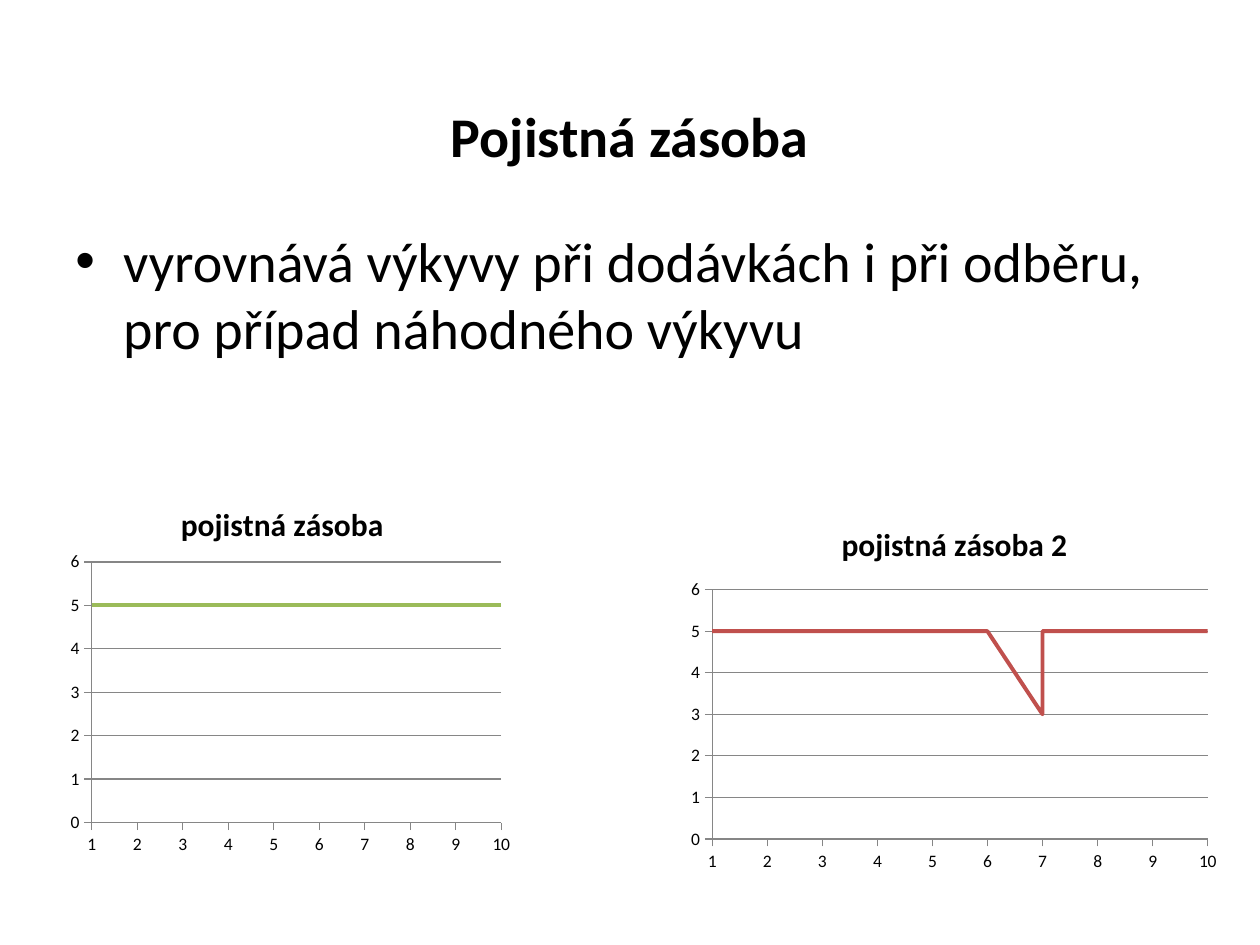
from dataclasses import dataclass

from lxml import etree
from pptx import Presentation
from pptx.chart.data import XyChartData
from pptx.dml.color import RGBColor
from pptx.enum.chart import XL_CHART_TYPE, XL_TICK_LABEL_POSITION, XL_TICK_MARK
from pptx.enum.text import MSO_ANCHOR, PP_ALIGN
from pptx.oxml.ns import qn
from pptx.util import Inches, Pt

SCATTER_LINES = XL_CHART_TYPE.XY_SCATTER_LINES_NO_MARKERS
LABELS_NEXT_TO_AXIS = XL_TICK_LABEL_POSITION.NEXT_TO_AXIS
TICK_OUTSIDE = XL_TICK_MARK.OUTSIDE
TICK_NONE = XL_TICK_MARK.NONE
MIDDLE = MSO_ANCHOR.MIDDLE
TOP = MSO_ANCHOR.TOP
CENTER = PP_ALIGN.CENTER
LEFT = PP_ALIGN.LEFT


@dataclass(frozen=True)
class Theme:
    """Colours, font and type sizes of the slide."""

    font: str = "Calibri"
    text: RGBColor = RGBColor(0x00, 0x00, 0x00)
    grid: RGBColor = RGBColor(0x86, 0x86, 0x86)
    green: RGBColor = RGBColor(0x9B, 0xBB, 0x59)
    red: RGBColor = RGBColor(0xC0, 0x50, 0x4D)
    text_size: Pt = Pt(32)
    title_spacing: Pt = Pt(58)
    chart_title_size: Pt = Pt(18)
    axis_size: Pt = Pt(10)
    grid_width: Pt = Pt(0.75)
    series_width: Pt = Pt(2.25)


THEME = Theme()


def style_font(font, size, bold=False):
    """Apply the theme font at the given size."""
    font.name = THEME.font
    font.size = size
    font.bold = bold
    font.color.rgb = THEME.text


def add_bullet(paragraph, indent):
    """Give a paragraph a round bullet with a hanging indent."""
    properties = paragraph._p.get_or_add_pPr()
    properties.set("marL", str(indent))
    properties.set("indent", str(-indent))
    etree.SubElement(properties, qn("a:buFont")).set("typeface", "Arial")
    etree.SubElement(properties, qn("a:buChar")).set("char", "•")


def add_text(slide, box, text, bold=False, align=LEFT, anchor=TOP,
             line_spacing=None, bullet_indent=None, insets=(0.1, 0.05, 0.1, 0.05)):
    """Add a wrapped text box with one formatted paragraph."""
    frame = slide.shapes.add_textbox(*map(Inches, box)).text_frame
    frame.word_wrap = True
    frame.vertical_anchor = anchor
    (frame.margin_left, frame.margin_top,
     frame.margin_right, frame.margin_bottom) = map(Inches, insets)
    paragraph = frame.paragraphs[0]
    paragraph.alignment = align
    if line_spacing is not None:
        paragraph.line_spacing = line_spacing
    if bullet_indent is not None:
        add_bullet(paragraph, Inches(bullet_indent))
    run = paragraph.add_run()
    run.text = text
    style_font(run.font, THEME.text_size, bold)


def set_plot_layout(chart, plot_box):
    """Fix the inner plot area as fractions of the chart."""
    plot_area = chart._chartSpace.chart.plotArea
    layout = plot_area.find(qn("c:layout"))
    if layout is None:
        layout = etree.Element(qn("c:layout"))
        plot_area.insert(0, layout)
    manual = etree.SubElement(layout, qn("c:manualLayout"))
    settings = [("layoutTarget", "inner"), ("xMode", "edge"), ("yMode", "edge")]
    settings += zip("xywh", map(str, plot_box))
    for name, value in settings:
        etree.SubElement(manual, qn(f"c:{name}")).set("val", value)


def style_axis(axis, minimum, maximum, gridlines):
    """Set the scale, ticks, labels and lines of an axis."""
    axis.minimum_scale = minimum
    axis.maximum_scale = maximum
    axis.major_unit = 1
    axis.major_tick_mark = TICK_OUTSIDE
    axis.minor_tick_mark = TICK_NONE
    axis.tick_label_position = LABELS_NEXT_TO_AXIS
    axis.has_major_gridlines = gridlines
    lines = [axis.format.line]
    if gridlines:
        lines.append(axis.major_gridlines.format.line)
    for line in lines:
        line.color.rgb = THEME.grid
        line.width = THEME.grid_width
    style_font(axis.tick_labels.font, THEME.axis_size)


def add_stock_chart(slide, box, plot_box, name, points, color):
    """Add a titled line chart of the stock level over time."""
    data = XyChartData()
    data_series = data.add_series(name)
    for x, y in points:
        data_series.add_data_point(x, y)
    chart = slide.shapes.add_chart(SCATTER_LINES, *map(Inches, box), data).chart
    style_font(chart.font, THEME.axis_size)
    chart.has_legend = False
    chart.has_title = True
    title_frame = chart.chart_title.text_frame
    title_frame.text = name
    style_font(title_frame.paragraphs[0].runs[0].font, THEME.chart_title_size, True)
    chart.chart_title.include_in_layout = False
    chart.plots[0].vary_by_categories = False
    series = chart.plots[0].series[0]
    series.smooth = False
    series.format.line.color.rgb = color
    series.format.line.width = THEME.series_width
    style_axis(chart.category_axis, 1, 10, False)
    style_axis(chart.value_axis, 0, 6, True)
    set_plot_layout(chart, plot_box)


def build_slide(slide):
    """Place the title, the bullet and the two charts."""
    add_text(slide, (0.5, 0.3, 9, 1.25), "Pojistná zásoba", bold=True, align=CENTER,
             anchor=MIDDLE, line_spacing=THEME.title_spacing, insets=(0, 0.03, 0, 0))
    add_text(slide, (0.5, 1.75, 9, 4.95),
             "vyrovnává výkyvy při dodávkách i při odběru, pro případ náhodného výkyvu",
             bullet_indent=0.38)
    steady = [(day, 5) for day in range(1, 13)]
    days = [1, 2, 3, 4, 4, 5, 6, 7, 7, 8, 9, 10]
    levels = [5] * 7 + [3] + [5] * 4
    add_stock_chart(slide, (0.35, 3.83, 3.78, 3), (0.1, 0.21, 0.86, 0.69),
                    "pojistná zásoba", steady, THEME.green)
    add_stock_chart(slide, (5.39, 3.99, 4.37, 3), (0.06, 0.23, 0.9, 0.66),
                    "pojistná zásoba 2", zip(days, levels), THEME.red)


def main():
    """Build and save the presentation."""
    presentation = Presentation()
    presentation.slide_width = Inches(10)
    presentation.slide_height = Inches(7.5)
    build_slide(presentation.slides.add_slide(presentation.slide_layouts[6]))
    presentation.save("out.pptx")


if __name__ == "__main__":
    main()
